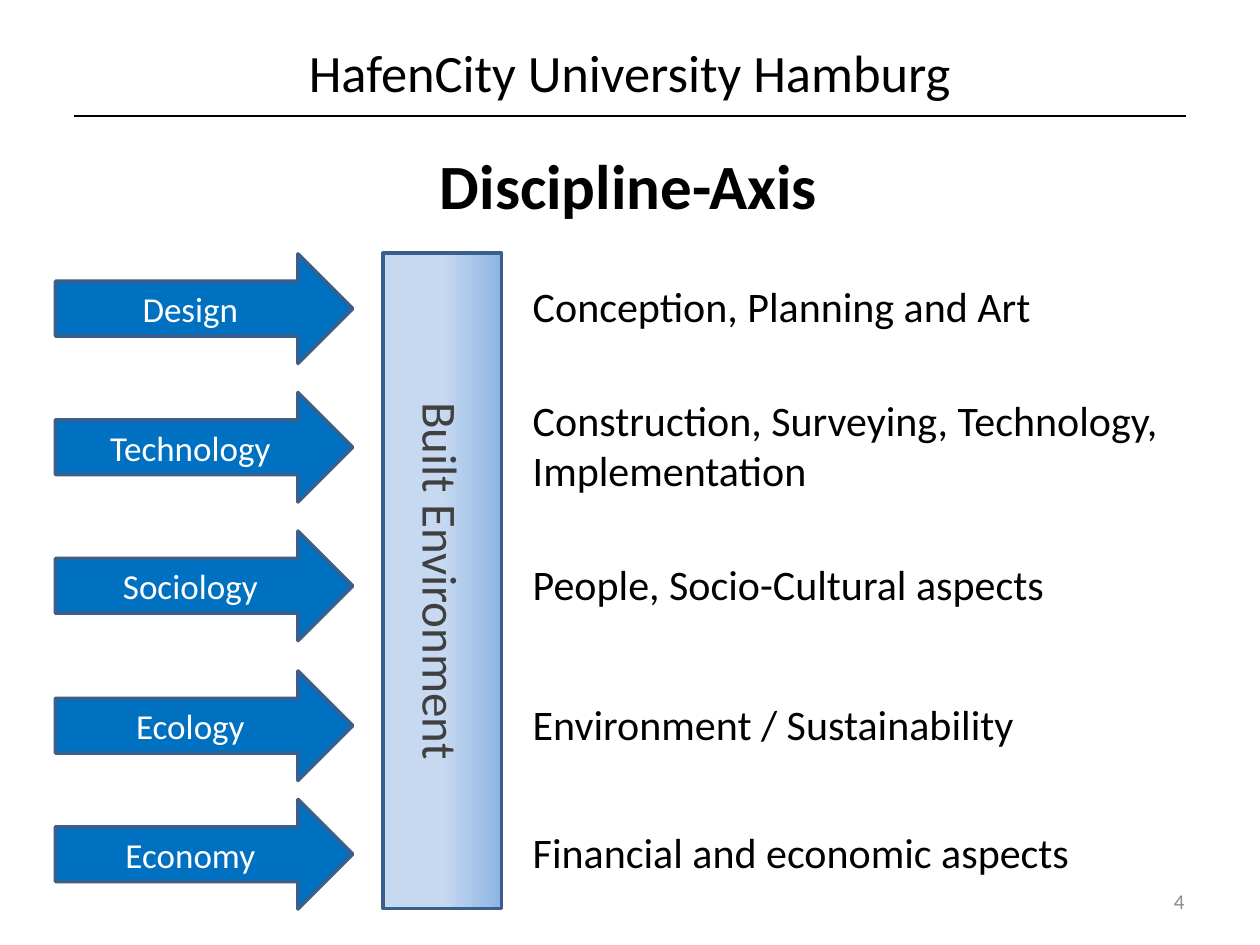
import pptx
import pptx.util
import pptx.dml.color
import pptx.enum.shapes
import pptx.enum.text
import lxml.etree

TITLE = "HafenCity University Hamburg"
HEADING = "Discipline-Axis"
BAR = "Built Environment"
PAGE_NUMBER = "4"
DISCIPLINES = [
    ("Design", "Conception, Planning and Art", 2.45),
    ("Technology", "Construction, Surveying, Technology, Implementation", 3.55),
    ("Sociology", "People, Socio-Cultural aspects", 4.65),
    ("Ecology", "Environment / Sustainability", 5.76),
    ("Economy", "Financial and economic aspects", 6.78),
]
COLORS = {
    "black": "000000", "white": "FFFFFF", "arrow": "0070C0", "edge": "3A5F8C",
    "pale": "C6D9F1", "blue": "8EB4E3", "bar_text": "404040", "number": "8C8C8C",
}
FONT = "Calibri"
ARROW_LEFT, ARROW_WIDTH, ARROW_HEIGHT = 0.44, 2.36, 0.87
BAR_CENTER, BAR_LENGTH, BAR_THICKNESS = (3.51, 4.61), 5.2, 0.94
LABEL_LEFT, LABEL_WIDTH, LABEL_SHIFT = 4.13, 5.66, -0.02

Inches, Pt = pptx.util.Inches, pptx.util.Pt
Align = pptx.enum.text.PP_ALIGN
Anchor = pptx.enum.text.MSO_ANCHOR
Shape = pptx.enum.shapes.MSO_SHAPE


def color(name):
    return pptx.dml.color.RGBColor.from_string(COLORS[name])


def write(shape, text, size, ink, align, anchor=Anchor.MIDDLE, bold=False):
    frame = shape.text_frame
    frame.word_wrap = True
    frame.vertical_anchor = anchor
    para = frame.paragraphs[0]
    para.text = text
    para.alignment = align
    para.font.name = FONT
    para.font.size = Pt(size)
    para.font.bold = bold
    para.font.color.rgb = color(ink)
    return frame


def add_text(page, place, *style, **options):
    box = page.shapes.add_textbox(*map(Inches, place))
    return write(box, *style, **options)


def add_block(page, kind, center, width, height, text, size, ink):
    left, top = center[0] - width / 2, center[1] - height / 2
    block = page.shapes.add_shape(kind, *map(Inches, (left, top, width, height)))
    block.shadow.inherit = False
    block.line.color.rgb = color("edge")
    block.line.width = Pt(2)
    write(block, text, size, ink, Align.CENTER)
    return block


def add_rule(page):
    rule = page.shapes.add_connector(
        pptx.enum.shapes.MSO_CONNECTOR.STRAIGHT,
        *map(Inches, (0.59, 0.92, 9.41, 0.92)))
    rule.line.color.rgb = color("black")
    rule.line.width = Pt(0.75)
    properties = rule._element.spPr
    lxml.etree.SubElement(properties, pptx.oxml.ns.qn("a:effectLst"))


def add_bar(page):
    bar = add_block(page, Shape.RECTANGLE, BAR_CENTER, BAR_LENGTH, BAR_THICKNESS,
                    BAR, 28, "bar_text")
    bar.rotation = 90
    bar.fill.gradient()
    bar.fill.gradient_angle = 90
    for stop, position, name in zip(bar.fill.gradient_stops, (0.5, 1), ("pale", "blue")):
        stop.position = position
        stop.color.rgb = color(name)


def add_discipline(page, name, label, middle):
    arrow = add_block(page, Shape.RIGHT_ARROW, (ARROW_LEFT + ARROW_WIDTH / 2, middle),
                      ARROW_WIDTH, ARROW_HEIGHT, name, 20, "white")
    arrow.fill.solid()
    arrow.fill.fore_color.rgb = color("arrow")
    height = 0.91 if len(label) > 40 else 0.5
    add_text(page, (LABEL_LEFT, middle + LABEL_SHIFT - height / 2, LABEL_WIDTH, height),
             label, 24, "black", Align.LEFT)


def main():
    deck = pptx.Presentation()
    deck.slide_width, deck.slide_height = Inches(10), Inches(7.5)
    page = deck.slides.add_slide(deck.slide_layouts[6])
    add_text(page, (0.5, 0.3, 9, 0.54), TITLE, 30, "black", Align.CENTER)
    add_rule(page)
    heading = add_text(page, (0.66, 1.23, 8.66, 0.55), HEADING, 36, "black",
                       Align.CENTER, Anchor.TOP, bold=True)
    heading.margin_left = heading.margin_right = 0
    heading.margin_top = heading.margin_bottom = 0
    heading.paragraphs[0].line_spacing = 0.9
    for discipline in DISCIPLINES:
        add_discipline(page, *discipline)
    add_bar(page)
    add_text(page, (7.17, 6.95, 2.33, 0.4), PAGE_NUMBER, 12, "number", Align.RIGHT)
    deck.save("out.pptx")


if __name__ == "__main__":
    main()
